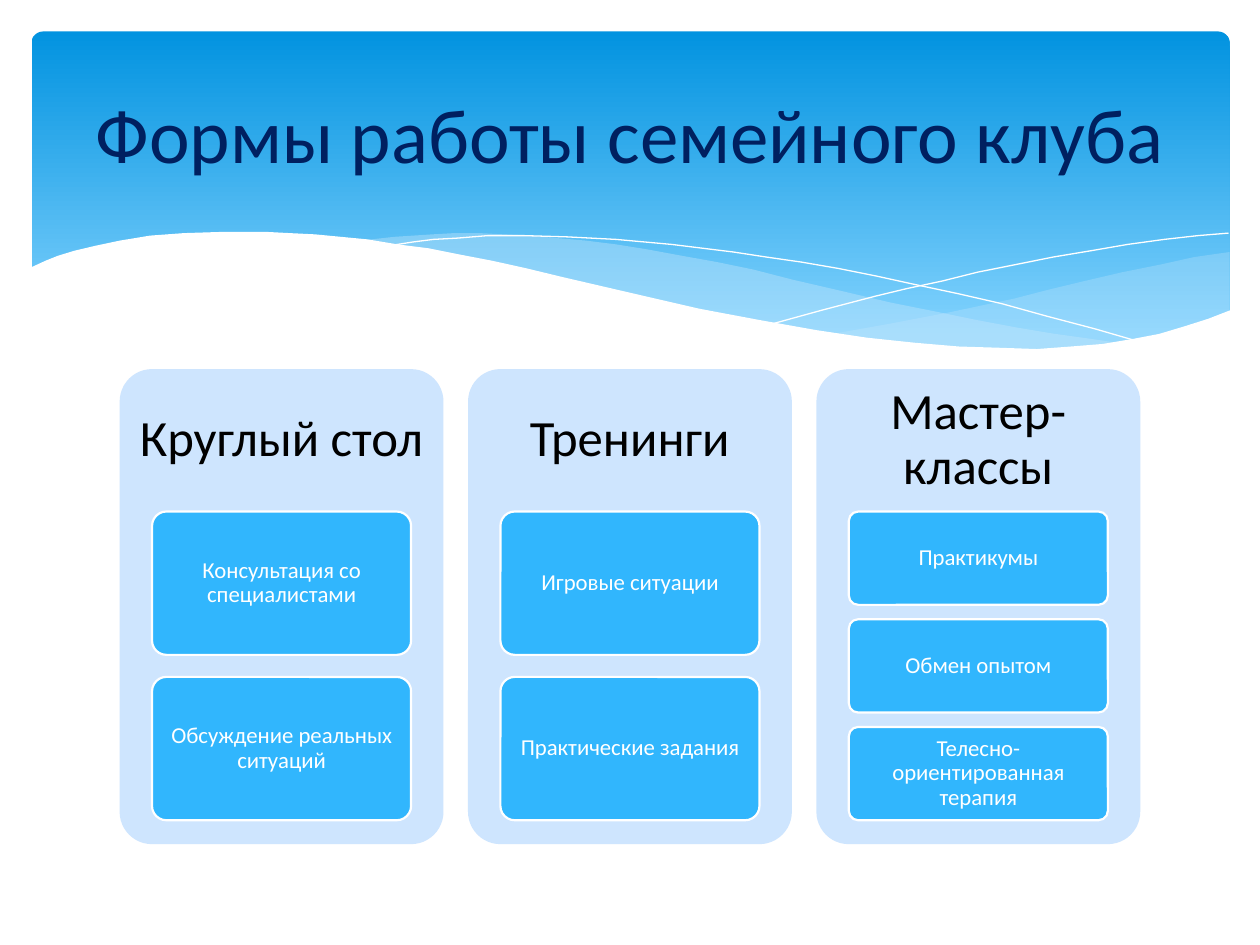
from pptx import Presentation
from pptx.dml.color import RGBColor
from pptx.enum import shapes, text
from pptx.oxml.ns import qn
from pptx.util import Inches, Pt
from lxml import etree

WHITE = RGBColor(0xFF, 0xFF, 0xFF)
BLACK = RGBColor(0, 0, 0)
NAVY = RGBColor(0x00, 0x20, 0x60)
SKY_DARK = RGBColor(0x02, 0x93, 0xE0)
SKY_LIGHT = RGBColor(0x83, 0xD3, 0xFE)
WAVE = RGBColor(0xC6, 0xE7, 0xFC)
PANEL = RGBColor(0xCE, 0xE5, 0xFE)
CARD = RGBColor(0x31, 0xB6, 0xFD)
FONT = "Calibri"

COLUMNS = [
    ("Круглый стол", ["Консультация со специалистами", "Обсуждение реальных ситуаций"]),
    ("Тренинги", ["Игровые ситуации", "Практические задания"]),
    ("Мастер-классы", ["Практикумы", "Обмен опытом", "Телесно-ориентированная терапия"]),
]

RIGHT_WAVE = [
    (9.76, 2), (9.48, 2.04), (9.21, 2.1), (8.91, 2.16), (8.61, 2.23), (8.32, 2.3),
    (8.05, 2.37), (7.53, 2.48), (7.06, 2.57), (6.61, 2.65), (6.91, 2.69), (7.19, 2.72),
    (7.45, 2.75), (7.69, 2.77), (8.03, 2.78), (8.35, 2.77), (8.63, 2.75), (8.89, 2.72),
    (9.13, 2.67), (9.35, 2.62), (9.49, 2.57), (9.63, 2.52), (9.76, 2.47),
]
MIDDLE_WAVE = [
    (8.93, 2.73), (8.66, 2.69), (8.37, 2.65), (8.07, 2.6), (7.75, 2.54), (7.41, 2.47),
    (7.06, 2.4), (6.68, 2.31), (6.29, 2.22), (5.98, 2.14), (5.69, 2.08), (5.41, 2.03),
    (5.14, 1.98), (4.89, 1.94), (4.65, 1.91), (4.42, 1.89), (4.2, 1.87), (3.99, 1.86),
    (3.8, 1.85), (3.61, 1.85), (3.44, 1.86), (3.13, 1.88), (2.86, 1.91), (3.23, 1.96),
    (3.62, 2.03), (4.04, 2.11), (4.49, 2.22), (4.91, 2.32), (5.3, 2.4), (5.66, 2.48),
    (6.01, 2.55), (6.34, 2.61), (6.65, 2.66), (6.95, 2.7), (7.22, 2.74), (7.48, 2.76),
    (7.73, 2.77), (7.96, 2.78), (8.28, 2.78), (8.57, 2.77), (8.76, 2.75),
]
FALLING_LINE = [
    (3.09, 1.95), (3.28, 1.92), (3.44, 1.9), (3.63, 1.89), (3.87, 1.87), (4.16, 1.87),
    (4.5, 1.88), (4.89, 1.9), (5.33, 1.94), (5.82, 2), (6.08, 2.04), (6.36, 2.08),
    (6.65, 2.13), (6.95, 2.19), (7.27, 2.26), (7.6, 2.33), (7.95, 2.41), (8.31, 2.51),
    (8.69, 2.61), (9.07, 2.72),
]
RISING_LINE = [
    (6.13, 2.57), (6.53, 2.46), (6.95, 2.35), (7.2, 2.29), (7.48, 2.23), (7.76, 2.16),
    (8.06, 2.1), (8.36, 2.04), (8.66, 1.99), (8.95, 1.94), (9.24, 1.9), (9.51, 1.87),
    (9.75, 1.85),
]
FRONT_WAVE = [
    (9.77, 2.46), (9.59, 2.53), (9.4, 2.59), (9.2, 2.65), (8.99, 2.69), (8.75, 2.73),
    (8.5, 2.75), (8.23, 2.77), (7.93, 2.76), (7.61, 2.75), (7.26, 2.72), (6.88, 2.68),
    (6.48, 2.62), (6.03, 2.54), (5.55, 2.45), (5.03, 2.33), (4.47, 2.2), (4.18, 2.13),
    (3.91, 2.07), (3.65, 2.02), (3.4, 1.97), (3.16, 1.94), (2.92, 1.9), (2.71, 1.88),
    (2.5, 1.86), (2.3, 1.85), (2.11, 1.84), (1.77, 1.84), (1.46, 1.85), (1.19, 1.87),
    (0.95, 1.91), (0.76, 1.95), (0.59, 1.99), (0.46, 2.03), (0.36, 2.07), (0.23, 2.13),
    (0.23, 3.29), (9.77, 3.29),
]


def add_round_rect(slide, x, y, w, h, adj):
    sp = slide.shapes.add_shape(shapes.MSO_SHAPE.ROUNDED_RECTANGLE,
                                Inches(x), Inches(y), Inches(w), Inches(h))
    sp.adjustments[0] = adj
    sp.shadow.inherit = False
    sp.line.fill.background()
    return sp


def add_curve(slide, points, closed):
    pts = [(Inches(x), Inches(y)) for x, y in points]
    builder = slide.shapes.build_freeform(*pts[0])
    builder.add_line_segments(pts[1:], close=closed)
    sp = builder.convert_to_shape()
    sp.shadow.inherit = False
    return sp


def add_wave(slide, points, color, alpha=100):
    sp = add_curve(slide, points, True)
    sp.line.fill.background()
    sp.fill.solid()
    sp.fill.fore_color.rgb = color
    if alpha < 100:
        clr = sp.element.spPr.find(qn("a:solidFill"))[0]
        etree.SubElement(clr, qn("a:alpha"), val=str(alpha * 1000))


def add_hairline(slide, points):
    sp = add_curve(slide, points, False)
    sp.fill.background()
    sp.line.color.rgb = WHITE
    sp.line.width = Pt(0)


def set_text(sp, content, size, color, inset_x, inset_y, spacing=0.9):
    tf = sp.text_frame
    tf.word_wrap = True
    tf.auto_size = text.MSO_AUTO_SIZE.NONE
    tf.vertical_anchor = text.MSO_ANCHOR.MIDDLE
    tf.margin_left = tf.margin_right = Inches(inset_x)
    tf.margin_top = tf.margin_bottom = Inches(inset_y)
    p = tf.paragraphs[0]
    p.text = content
    p.alignment = text.PP_ALIGN.CENTER
    p.line_spacing = spacing
    p.font.name = FONT
    p.font.size = Pt(size)
    p.font.color.rgb = color


def add_header(slide):
    sp = add_round_rect(slide, 0.25, 0.25, 9.51, 2.7, 0.034)
    sp.fill.gradient()
    sp.fill.gradient_angle = 270
    for stop, pos, color in zip(sp.fill.gradient_stops, (0, 0.9), (SKY_DARK, SKY_LIGHT)):
        stop.position = pos
        stop.color.rgb = color
    add_wave(slide, RIGHT_WAVE, WAVE, 29)
    add_wave(slide, MIDDLE_WAVE, WAVE, 40)
    add_hairline(slide, FALLING_LINE)
    add_hairline(slide, RISING_LINE)
    add_wave(slide, FRONT_WAVE, WHITE)


def add_card(slide, content, x, y, w, h):
    sp = add_round_rect(slide, x, y, w, h, 0.1)
    sp.fill.solid()
    sp.fill.fore_color.rgb = CARD
    sp.line.color.rgb = WHITE
    sp.line.width = Pt(1.25)
    set_text(sp, content, 13, WHITE, 0.04, 0.03)


def add_column(slide, x, heading, cards):
    top, width, head_h, stack_h, gap_ratio = 2.93, 2.57, 1.13, 2.45, 0.154
    panel = add_round_rect(slide, x, top, width, 3.77, 0.1)
    panel.fill.solid()
    panel.fill.fore_color.rgb = PANEL
    box = slide.shapes.add_textbox(Inches(x), Inches(top), Inches(width), Inches(head_h))
    set_text(box, heading, 29, BLACK, 0.12, 0.12)
    n = len(cards)
    h = stack_h / (n + (n - 1) * gap_ratio)
    for i, content in enumerate(cards):
        y = top + head_h + i * h * (1 + gap_ratio)
        add_card(slide, content, x + width * 0.1, y, width * 0.8, h)


def add_title(slide, content):
    title = slide.shapes.title
    title.left, title.top = Inches(0.5), Inches(0.37)
    title.width, title.height = Inches(9), Inches(1.37)
    set_text(title, content, 44, NAVY, 0.1, 0.05, 1.0)
    title.element.getparent().append(title.element)


def main():
    prs = Presentation()
    prs.slide_width, prs.slide_height = Inches(10), Inches(7.5)
    slide = prs.slides.add_slide(prs.slide_layouts[5])
    add_header(slide)
    for i, (heading, cards) in enumerate(COLUMNS):
        add_column(slide, 0.95 + i * 2.765, heading, cards)
    add_title(slide, "Формы работы семейного клуба")
    prs.save("out.pptx")


if __name__ == "__main__":
    main()
